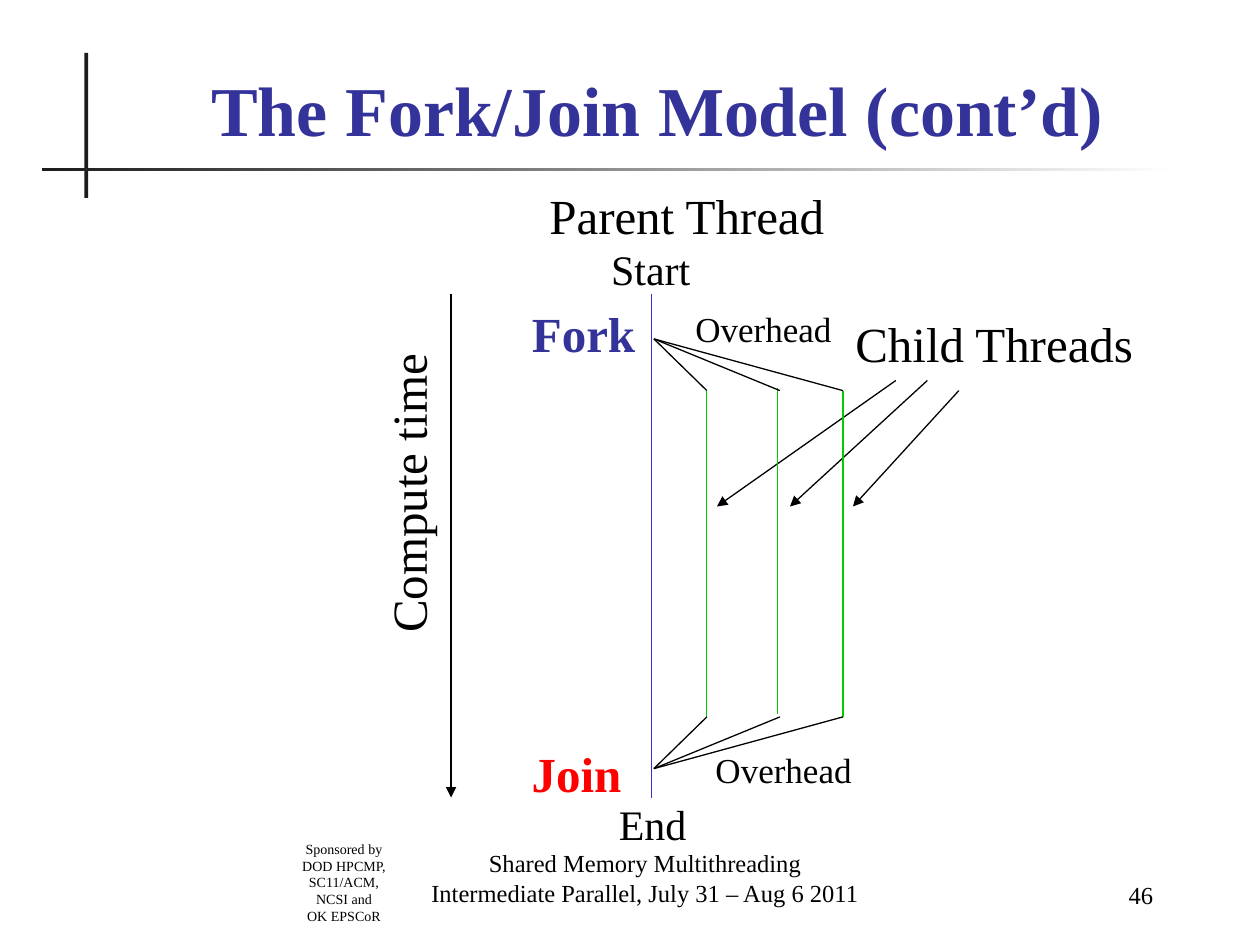
import pptx
import pptx.util
import pptx.dml.color
import pptx.enum.shapes
import pptx.enum.text
import pptx.oxml.ns
from lxml import etree

Inches, Pt = pptx.util.Inches, pptx.util.Pt
RGBColor = pptx.dml.color.RGBColor
ANCHOR, ALIGN = pptx.enum.text.MSO_ANCHOR, pptx.enum.text.PP_ALIGN
qn = pptx.oxml.ns.qn

BLACK = RGBColor(0x00, 0x00, 0x00)
WHITE = RGBColor(0xFF, 0xFF, 0xFF)
CHARCOAL = RGBColor(0x1C, 0x1C, 0x1C)
NAVY = RGBColor(0x33, 0x33, 0x99)
BLUE = RGBColor(0x33, 0x33, 0xCC)
GREEN = RGBColor(0x00, 0xCC, 0x00)
RED = RGBColor(0xFF, 0x00, 0x00)
FONT = "Times New Roman"
LEFT, CENTER, RIGHT = ALIGN.LEFT, ALIGN.CENTER, ALIGN.RIGHT
TOP, BOTTOM = ANCHOR.TOP, ANCHOR.BOTTOM

# paragraphs, (left, top, width, height), size, alignment, anchor, wraps
BLOCKS = [
    (["Sponsored by DOD HPCMP, SC11/ACM, NCSI and", "OK EPSCoR"],
     (2.27, 6.62, 0.92, 0.77), 8, CENTER, TOP),
    (["46"], (7.83, 6.77, 1.42, 0.5), 14, RIGHT, BOTTOM),
    (["Shared Memory Multithreading",
      "Intermediate Parallel, July 31 – Aug 6 2011"],
     (3.08, 6.75, 4.08, 0.5), 14, CENTER, BOTTOM),
]
TITLE = (["The Fork/Join Model (cont’d)"], (0.83, 0.5, 8.77, 0.74), 40, CENTER, BOTTOM)

# text, (left, top, width, height), size, alignment, format
LABELS = [
    ("Parent Thread", (4.25, 1.42, 2.39, 0.57), 28, RIGHT, {}),
    ("Fork", (4.12, 2.36, 1.02, 0.57), 28, RIGHT, {"color": NAVY, "bold": True}),
    ("Join", (4.12, 5.85, 0.91, 0.57), 28, RIGHT, {"color": RED, "bold": True}),
    ("Start", (4.75, 1.88, 0.83, 0.5), 24, CENTER, {}),
    ("End", (4.81, 6.29, 0.74, 0.5), 24, CENTER, {}),
    ("Child Threads", (6.69, 2.44, 2.41, 0.57), 28, LEFT, {}),
    ("Compute time", (2.03, 3.63, 2.41, 0.57), 28, LEFT, {"rotation": 270}),
    ("Overhead", (5.42, 2.39, 1.28, 0.43), 20, LEFT, {}),
    ("Overhead", (5.58, 5.89, 1.28, 0.43), 20, LEFT, {}),
]

START_Y, END_Y = 2.33, 6.33
PARENT_X, TIME_X = 5.17, 3.58
FORK, JOIN = (5.19, 2.69), (5.19, 6.1)
CHILD_TOP, CHILD_BOTTOM = 3.1, 5.69
POINTER_END_Y = 4.02
# x where the overhead lines meet the child, shift of the child line,
# start of the pointer, x of the pointer's head
CHILDREN = [
    (5.61, 0, (7.11, 3.02), 5.69),
    (6.19, -0.02, (7.36, 3.02), 6.27),
    (6.69, 0, (7.61, 3.1), 6.77),
]

prs = pptx.Presentation()
prs.slide_width, prs.slide_height = Inches(10), Inches(7.5)
s = prs.slides.add_slide(prs.slide_layouts[6])


def add_text(paragraphs, box, size, align, anchor=TOP, wrap=True,
             color=BLACK, bold=False, rotation=0):
    sp = s.shapes.add_textbox(*map(Inches, box))
    sp.rotation = rotation
    tf = sp.text_frame
    tf.word_wrap, tf.vertical_anchor = wrap, anchor
    for i, text in enumerate(paragraphs):
        p = tf.add_paragraph() if i else tf.paragraphs[0]
        p.alignment = align
        r = p.add_run()
        r.text = text
        for name, value in {"name": FONT, "size": Pt(size), "bold": bold}.items():
            setattr(r.font, name, value)
        r.font.color.rgb = color


def add_bar(box):
    sp = s.shapes.add_shape(pptx.enum.shapes.MSO_SHAPE.RECTANGLE, *map(Inches, box))
    sp.shadow.inherit = False
    sp.line.fill.background()
    return sp.fill


def add_line(start, end, color=BLACK, arrow=False):
    line = s.shapes.add_connector(pptx.enum.shapes.MSO_CONNECTOR.STRAIGHT,
                                  *map(Inches, start + end))
    line.line.color.rgb = color
    line.line.width = Pt(0.75)
    if arrow:
        etree.SubElement(line.line._get_or_add_ln(), qn("a:tailEnd"), type="triangle")
    etree.SubElement(line._element.spPr, qn("a:effectLst"))


upright = add_bar((0.67, 0.42, 0.03, 1.15))
upright.solid()
upright.fore_color.rgb = CHARCOAL
rule = add_bar((0.33, 1.33, 9, 0.03))
rule.gradient()
rule.gradient_angle = 0
for stop, color, position in zip(rule.gradient_stops, (CHARCOAL, WHITE), (0, 1)):
    stop.color.rgb = color
    stop.position = position

add_text(*TITLE, color=NAVY, bold=True)
for block in BLOCKS:
    add_text(*block)

add_line((PARENT_X, START_Y), (PARENT_X, END_Y), BLUE)
add_line((TIME_X, START_Y), (TIME_X, END_Y), arrow=True)
for x, shift, pointer_start, pointer_x in CHILDREN:
    add_line((x + shift, CHILD_TOP + shift), (x + shift, CHILD_BOTTOM + shift), GREEN)
    add_line(FORK, (x, CHILD_TOP))
    add_line(JOIN, (x, CHILD_BOTTOM))
    add_line(pointer_start, (pointer_x, POINTER_END_Y), arrow=True)

for text, box, size, align, formats in LABELS:
    add_text([text], box, size, align, wrap=False, **formats)

prs.save("out.pptx")
